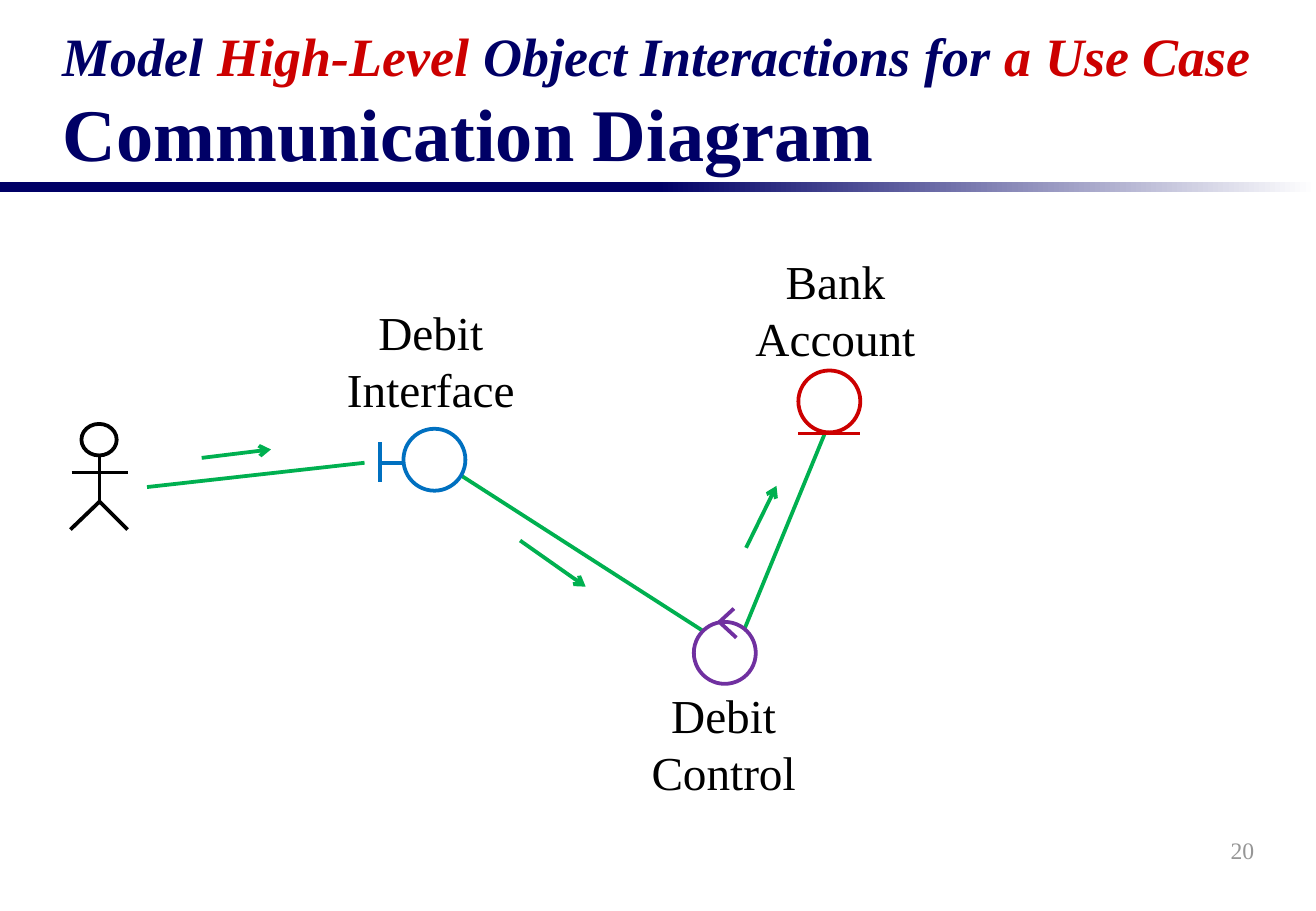
import dataclasses
import pptx
import pptx.dml.color
import pptx.enum.shapes
import pptx.enum.text
import pptx.oxml
import pptx.oxml.ns
import pptx.util

Inches = pptx.util.Inches
Pt = pptx.util.Pt
Align = pptx.enum.text.PP_ALIGN
Anchor = pptx.enum.text.MSO_ANCHOR
Preset = pptx.enum.shapes.MSO_SHAPE


@dataclasses.dataclass
class Theme:
    font: str = "Times New Roman"
    navy: str = "000066"
    red: str = "CC0000"
    green: str = "00B050"
    blue: str = "0070C0"
    purple: str = "7030A0"
    black: str = "000000"
    white: str = "FFFFFF"
    grey: str = "969696"
    topic_size: float = 32
    title_size: float = 44
    label_size: float = 28
    label_pitch: float = 33.6
    number_size: float = 14
    stroke: float = 2.25


def rgb(color):
    return pptx.dml.color.RGBColor.from_string(color)


class DiagramSlide:
    def __init__(self, deck, theme):
        self.theme = theme
        self.page = deck.slides.add_slide(deck.slide_layouts[6])
        self.shapes = self.page.shapes

    def text_box(self, left, top, width, height, anchor, side=0.1, edge=0.05):
        box = self.shapes.add_textbox(*map(Inches, (left, top, width, height)))
        frame = box.text_frame
        frame.word_wrap = True
        frame.vertical_anchor = anchor
        frame.margin_left = frame.margin_right = Inches(side)
        frame.margin_top = frame.margin_bottom = Inches(edge)
        return frame

    def add_span(self, para, text, size, color, bold=False, italic=False):
        span = para.add_run()
        span.text = text
        span.font.name = self.theme.font
        span.font.size = Pt(size)
        span.font.color.rgb = rgb(color)
        span.font.bold = bold
        span.font.italic = italic

    def label(self, left, top, words):
        frame = self.text_box(left, top, 2.75, 0.93, Anchor.TOP, 0, 0)
        for index, word in enumerate(words):
            para = frame.add_paragraph() if index else frame.paragraphs[0]
            para.alignment = Align.CENTER
            para.line_spacing = Pt(self.theme.label_pitch)
            self.add_span(para, word, self.theme.label_size, self.theme.black)

    def outline(self, shape, color):
        shape.shadow.inherit = False
        shape.line.color.rgb = rgb(color)
        shape.line.width = Pt(self.theme.stroke)

    def ellipse(self, left, top, width, height, color):
        shape = self.shapes.add_shape(
            Preset.OVAL, *map(Inches, (left, top, width, height)))
        shape.fill.solid()
        shape.fill.fore_color.rgb = rgb(self.theme.white)
        self.outline(shape, color)

    def polyline(self, points, color):
        start, *rest = [tuple(map(Inches, point)) for point in points]
        builder = self.shapes.build_freeform(*start)
        builder.add_line_segments(rest, close=False)
        shape = builder.convert_to_shape()
        shape.fill.background()
        self.outline(shape, color)

    def line(self, start, end, color, arrow=False):
        connector = self.shapes.add_connector(
            pptx.enum.shapes.MSO_CONNECTOR.STRAIGHT,
            *map(Inches, (*start, *end)))
        connector.line.color.rgb = rgb(color)
        connector.line.width = Pt(self.theme.stroke)
        if arrow:
            head = pptx.oxml.parse_xml(
                f'<a:tailEnd {pptx.oxml.ns.nsdecls("a")} type="arrow"/>')
            connector.line._get_or_add_ln().append(head)
        effects = pptx.oxml.parse_xml(
            f'<a:effectLst {pptx.oxml.ns.nsdecls("a")}/>')
        connector._element.spPr.append(effects)

    def rule_half(self, left, fade):
        bar = self.shapes.add_shape(
            Preset.RECTANGLE, *map(Inches, (left, 1.5, 5.42, 0.08)))
        bar.shadow.inherit = False
        bar.line.fill.background()
        if fade:
            bar.fill.gradient()
            bar.fill.gradient_angle = 0
            colors = (self.theme.navy, self.theme.white)
            for stop, color in zip(bar.fill.gradient_stops, colors):
                stop.color.rgb = rgb(color)
        else:
            bar.fill.solid()
            bar.fill.fore_color.rgb = rgb(self.theme.navy)

    def title(self, topic, name):
        frame = self.text_box(0.42, 0.29, 10, 1.21, Anchor.BOTTOM)
        para = frame.paragraphs[0]
        for text, color in topic:
            self.add_span(para, text, self.theme.topic_size, color, True, True)
        para.add_line_break()
        self.add_span(para, name, self.theme.title_size, self.theme.navy, True)

    def page_number(self, number):
        frame = self.text_box(8.16, 6.75, 2.26, 0.5, Anchor.MIDDLE)
        para = frame.paragraphs[0]
        para.alignment = Align.RIGHT
        self.add_span(para, number, self.theme.number_size, self.theme.grey)


def main():
    deck = pptx.Presentation()
    deck.slide_width = Inches(10.83)
    deck.slide_height = Inches(7.5)
    theme = Theme()
    slide = DiagramSlide(deck, theme)

    # Heading, rule and page number
    slide.rule_half(0, fade=False)
    slide.rule_half(5.41, fade=True)
    slide.title([("Model ", theme.navy),
                 ("High-Level", theme.red),
                 (" Object Interactions for ", theme.navy),
                 ("a Use Case", theme.red)], "Communication Diagram")
    slide.page_number("20")

    # Links between the participants
    for start, end in [((1.21, 4.01), (3, 3.81)),
                       ((3.6, 3.79), (5.95, 5.3)),
                       ((6.04, 5.39), (6.89, 3.32))]:
        slide.line(start, end, theme.green)

    # Message arrows beside the links
    for start, end in [((1.66, 3.77), (2.23, 3.7)),
                       ((4.28, 4.45), (4.82, 4.83)),
                       ((6.14, 4.51), (6.39, 4))]:
        slide.line(start, end, theme.green, arrow=True)

    # Actor
    slide.line((0.82, 3.7), (0.82, 4.13), theme.black)
    slide.line((0.59, 3.89), (1.05, 3.89), theme.black)
    slide.polyline([(0.58, 4.36), (0.82, 4.13), (1.05, 4.36)], theme.black)
    slide.ellipse(0.67, 3.49, 0.29, 0.26, theme.black)

    # Boundary, control and entity objects
    for left, top, color in [(3.32, 3.53, theme.blue),
                             (5.71, 5.12, theme.purple),
                             (6.57, 3.05, theme.red)]:
        slide.ellipse(left, top, 0.51, 0.51, color)

    # Strokes that tell the three objects apart
    for start, end, color in [((3.13, 3.64), (3.13, 3.97), theme.blue),
                              ((3.33, 3.81), (3.13, 3.81), theme.blue),
                              ((5.91, 5.13), (6.04, 5.01), theme.purple),
                              ((6.06, 5.25), (5.93, 5.13), theme.purple),
                              ((6.57, 3.57), (7.08, 3.57), theme.red)]:
        slide.line(start, end, color)

    # Object names
    slide.label(2.17, 2.5, ["Debit", "Interface"])
    slide.label(5.5, 2.08, ["Bank", "Account"])
    slide.label(4.58, 5.65, ["Debit", "Control"])

    deck.save("out.pptx")


if __name__ == "__main__":
    main()
